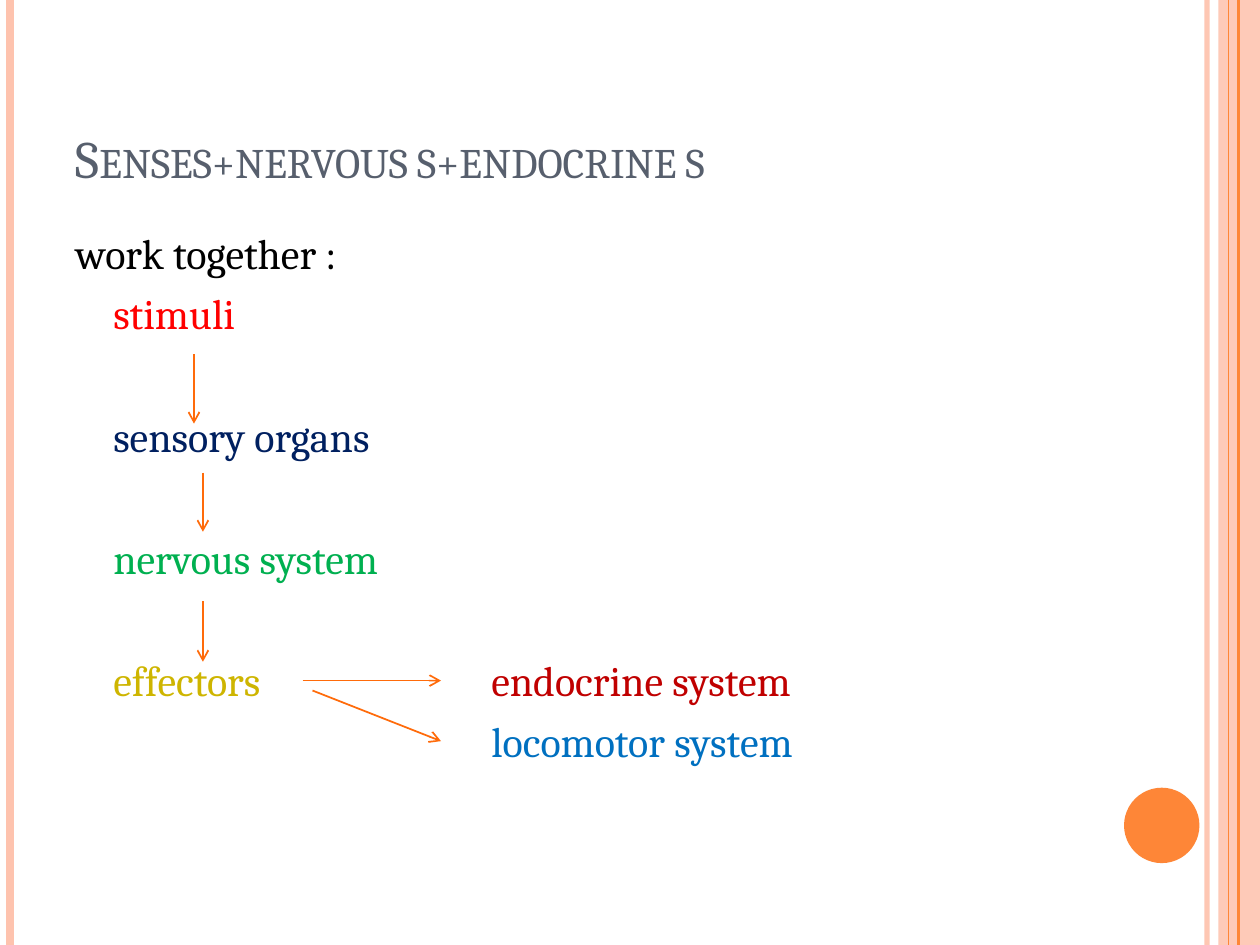
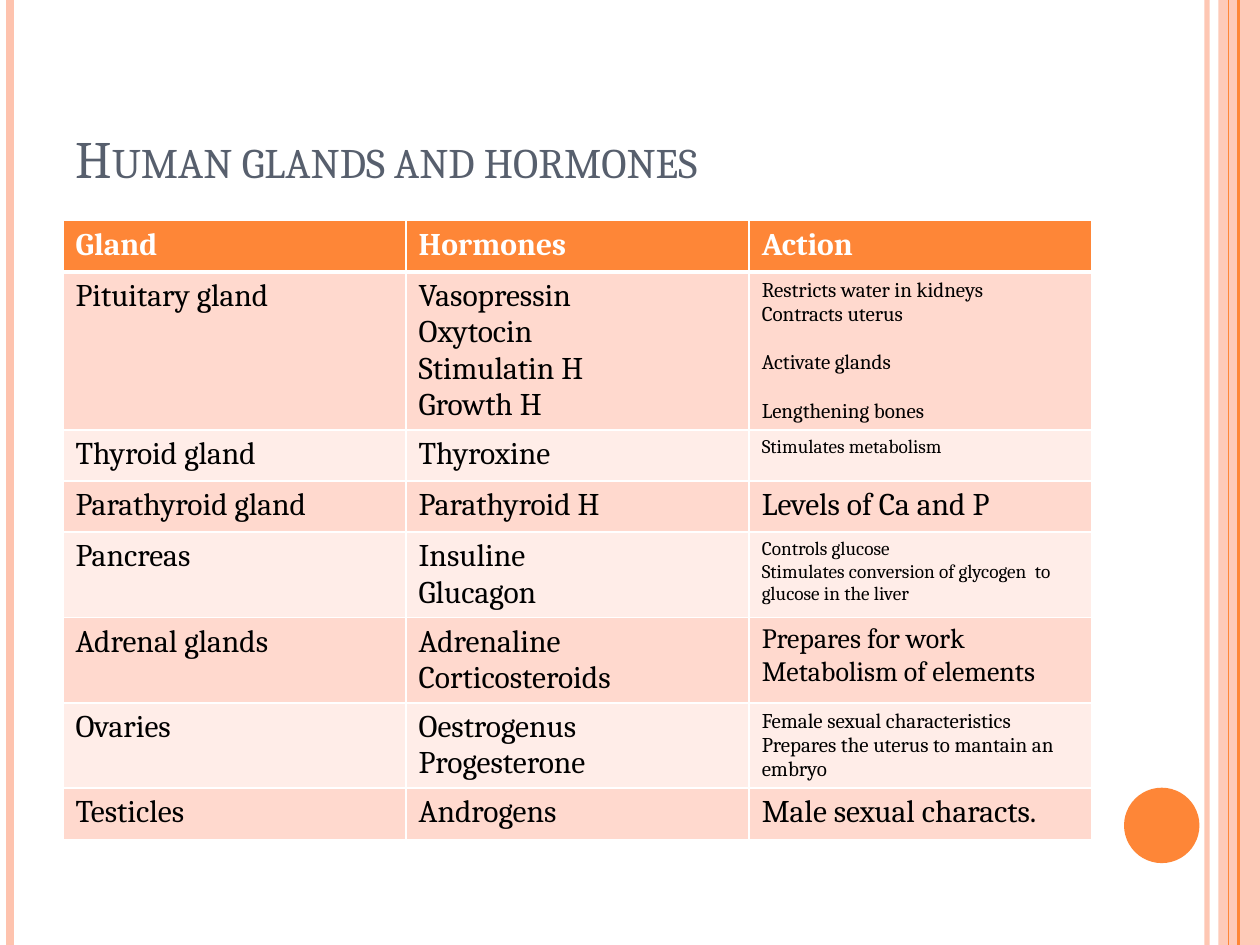
from dataclasses import dataclass

from lxml import etree
from pptx import Presentation
from pptx.dml.color import RGBColor
from pptx.enum.shapes import MSO_CONNECTOR, MSO_SHAPE
from pptx.enum.text import MSO_ANCHOR, MSO_AUTO_SIZE, PP_ALIGN
from pptx.oxml.ns import qn
from pptx.util import Cm, Pt

STRAIGHT = MSO_CONNECTOR.STRAIGHT
RECT = MSO_SHAPE.RECTANGLE
OVAL = MSO_SHAPE.OVAL
BOTTOM = MSO_ANCHOR.BOTTOM
TOP = MSO_ANCHOR.TOP
LEFT = PP_ALIGN.LEFT
FIXED = MSO_AUTO_SIZE.NONE


@dataclass(frozen=True)
class Theme:
    font: str = "Cambria"
    slate: str = "575F6D"
    black: str = "000000"
    white: str = "FFFFFF"
    peach: str = "FEC3AE"
    orange: str = "FE8637"
    arrow: str = "FF6B0A"
    dark_row: str = "FFD9CE"
    pale_row: str = "FFEDE8"
    title: int = 30
    body: int = 24
    cell: int = 18


THEME = Theme()
PAGE = (25.4, 19.05)
TITLE = (1.27, 0.76, 20.75, 3.18)
BODY = (1.27, 4.45, 20.75, 13.54)
DOT = (22.66, 15.88, 1.52, 1.52)
BAND = (24.56, 0, 0.84, PAGE[1])

RULES = [
    (24.33, THEME.peach, 3, 93),
    (0.2, THEME.peach, 4.5, 100),
    (24.97, THEME.orange, 1.5, 100),
    (24.77, THEME.orange, 0.75, 100),
]

INDENT = 0.76
FAR = 8.38
NEAR = 6
SKIP = 41
STEPS = [
    (0, NEAR, [("work together :", THEME.black)]),
    (INDENT, NEAR, [("stimuli", "FF0000")]),
    (INDENT, SKIP, [("sensory organs", "002060")]),
    (INDENT, SKIP, [("nervous system", "00B050")]),
    (INDENT, SKIP, [("effectors\t\t", "CEB500"), ("endocrine system", "C00000")]),
    (FAR, NEAR, [("locomotor system", "0070C0")]),
]
ARROWS = [
    (2.64, 2.69, 2.64, 4.09),
    (2.82, 5.08, 2.82, 6.27),
    (2.82, 7.67, 2.82, 8.89),
    (4.83, 9.27, 7.62, 9.27),
    (5.03, 9.47, 7.62, 10.49),
]

HEADS = ["Gland", "Hormones", "Action"]
GLANDS = [
    ("Pituitary gland", ["Vasopressin", "Oxytocin", "Stimulatin H", "Growth H"],
     ["Restricts water in kidneys", "Contracts uterus", "", "Activate glands",
      "", "Lengthening bones"], 12),
    ("Thyroid gland", ["Thyroxine"], ["Stimulates metabolism"], 11),
    ("Parathyroid gland", ["Parathyroid H"], ["Levels of Ca and P"], 18),
    ("Pancreas", ["Insuline", "Glucagon"],
     ["Controls glucose",
      "Stimulates conversion of glycogen  to glucose in the liver"], 11),
    ("Adrenal glands", ["Adrenaline", "Corticosteroids"],
     ["Prepares for work", "Metabolism of elements"], 16),
    ("Ovaries", ["Oestrogenus", "Progesterone"],
     ["Female sexual characteristics",
      "Prepares the uterus to mantain an embryo"], 12),
    ("Testicles", ["Androgens"], ["Male sexual characts."], 18),
]
ROW = 1.03
LINE = 0.73
PAD = 0.25


def rgb(code):
    return RGBColor.from_string(code)


def place(shape, box):
    shape.left, shape.top, shape.width, shape.height = map(Cm, box)


def style(run, size, color, bold=False):
    run.font.name = THEME.font
    run.font.size = Pt(size)
    run.font.bold = bold
    run.font.color.rgb = rgb(color)


def fade(shape, share):
    for color in shape.element.spPr.iter(qn("a:srgbClr")):
        etree.SubElement(color, qn("a:alpha"), val=str(share * 1000))


def add_line(shapes, ends, color, width, head=False):
    line = shapes.add_connector(STRAIGHT, *map(Cm, ends))
    line.line.color.rgb = rgb(color)
    line.line.width = Pt(width)
    props = line.element.spPr
    if head:
        etree.SubElement(props.find(qn("a:ln")), qn("a:tailEnd"), type="arrow")
    etree.SubElement(props, qn("a:effectLst"))
    return line


def add_block(shapes, kind, box, color):
    block = shapes.add_shape(kind, *map(Cm, box))
    block.shadow.inherit = False
    block.fill.solid()
    block.fill.fore_color.rgb = rgb(color)
    block.line.fill.background()
    return block


def add_frame(slide, master):
    shapes = slide.shapes
    parts = []
    for x, color, width, share in RULES:
        line = add_line(shapes, (x, 0, x, PAGE[1]), color, width)
        if share < 100:
            fade(line, share)
        parts.append(line)
    band = add_block(shapes, RECT, BAND, THEME.peach)
    fade(band, 87)
    parts.insert(2, band)
    parts.append(add_block(shapes, OVAL, DOT, THEME.orange))
    tree = master.shapes.element if hasattr(master.shapes, "element") else master.element.cSld.spTree
    for key, part in enumerate(parts, 100):
        part.element.xpath(".//p:cNvPr")[0].set("id", str(key))
        tree.append(part.element)


def add_title(slide, text):
    title = slide.shapes.title
    place(title, TITLE)
    frame = title.text_frame
    frame.text = text
    frame.word_wrap = True
    frame.auto_size = FIXED
    frame.vertical_anchor = BOTTOM
    para = frame.paragraphs[0]
    para.alignment = LEFT
    run = para.runs[0]
    style(run, THEME.title, THEME.slate)
    run.font._element.set("cap", "small")


def add_step(para, indent, gap, parts):
    para.alignment = LEFT
    para.space_before = Pt(gap)
    props = para._p.get_or_add_pPr()
    props.set("marL", str(Cm(indent)))
    props.set("indent", "0")
    props.set("defTabSz", str(Cm(2.54)))
    etree.SubElement(props, qn("a:buNone"))
    for text, color in parts:
        run = para.add_run()
        run.text = text
        style(run, THEME.body, color)


def add_flow(slide, box):
    body = slide.placeholders[1]
    place(body, box)
    frame = body.text_frame
    frame.word_wrap = True
    frame.auto_size = FIXED
    frame.vertical_anchor = TOP
    for i, step in enumerate(STEPS):
        para = frame.add_paragraph() if i else frame.paragraphs[0]
        add_step(para, *step)
    x, y = box[:2]
    for x1, y1, x2, y2 in ARROWS:
        add_line(slide.shapes, (x + x1, y + y1, x + x2, y + y2),
                 THEME.arrow, 1, head=True)


def edge_cell(cell, top, base):
    props = cell._tc.get_or_add_tcPr()
    for side, width in (("L", 1), ("R", 1), ("T", top), ("B", base)):
        line = etree.SubElement(props, qn(f"a:ln{side}"), w=str(Pt(width)))
        fill = etree.SubElement(line, qn("a:solidFill"))
        etree.SubElement(fill, qn("a:srgbClr"), val=THEME.white)


def fill_cell(cell, lines, size, color, back, bold=False):
    cell.fill.solid()
    cell.fill.fore_color.rgb = rgb(back)
    cell.text_frame.text = "\n".join(filter(None, lines))
    shown = [i for i, text in enumerate(lines) if text]
    for i, para in zip(shown, cell.text_frame.paragraphs):
        if i and not lines[i - 1]:
            para.space_before = Pt(size * 1.16)
        style(para.runs[0], size, color, bold)


def add_glands(slide, box):
    x, y, width, _ = box
    high = [ROW] + [max(ROW, len(row[1]) * LINE + PAD) for row in GLANDS]
    table = slide.shapes.add_table(
        len(high), len(HEADS), Cm(x), Cm(y), Cm(width), Cm(sum(high))).table
    for col in table.columns:
        col.width = Cm(width / len(HEADS))
    for i, size in enumerate(high):
        table.rows[i].height = Cm(size)
        for j in range(len(HEADS)):
            edge_cell(table.cell(i, j), 3 if i == 1 else 1, 1 if i else 3)
    for j, head in enumerate(HEADS):
        fill_cell(table.cell(0, j), [head], THEME.cell, THEME.white,
                  THEME.orange, bold=True)
    for i, (gland, names, acts, small) in enumerate(GLANDS, 1):
        back = THEME.dark_row if i % 2 else THEME.pale_row
        sizes = (THEME.cell, THEME.cell, small)
        for j, (lines, size) in enumerate(zip(([gland], names, acts), sizes)):
            fill_cell(table.cell(i, j), lines, size, THEME.black, back)


def main():
    deck = Presentation()
    deck.slide_width, deck.slide_height = map(Cm, PAGE)
    flow = deck.slides.add_slide(deck.slide_layouts[1])
    add_frame(flow, deck.slide_master)
    add_title(flow, "Senses+nervous s+endocrine s")
    add_flow(flow, BODY)
    chart = deck.slides.add_slide(deck.slide_layouts[5])
    add_title(chart, "Human glands and hormones")
    add_glands(chart, BODY)
    deck.save("out.pptx")


if __name__ == "__main__":
    main()
